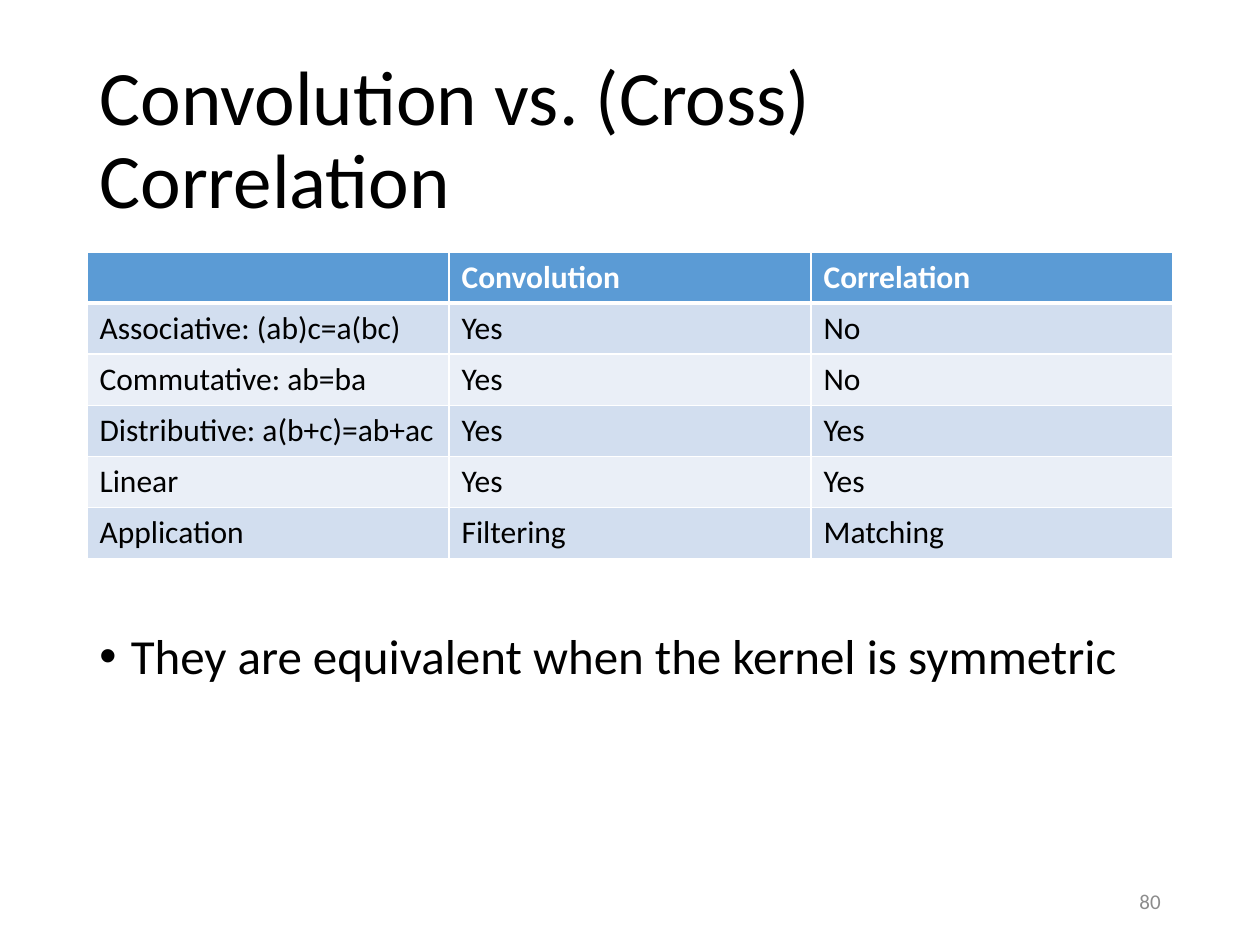
import pptx
import pptx.dml.color
import pptx.enum.text
import pptx.oxml.ns
import pptx.util
import lxml.etree

Inches = pptx.util.Inches
Pt = pptx.util.Pt
ALIGN = pptx.enum.text.PP_ALIGN
ANCHOR = pptx.enum.text.MSO_ANCHOR

PROPERTIES = [
    ["", "Convolution", "Correlation"],
    ["Associative: (ab)c=a(bc)", "Yes", "No"],
    ["Commutative: ab=ba", "Yes", "No"],
    ["Distributive: a(b+c)=ab+ac", "Yes", "Yes"],
    ["Linear", "Yes", "Yes"],
    ["Application", "Filtering", "Matching"],
]


def rgb(value):
    return pptx.dml.color.RGBColor.from_string(value)


def add_xml(parent, tag, **attributes):
    return lxml.etree.SubElement(parent, pptx.oxml.ns.qn(tag), attributes)


def write(frame, text, size=18, color="000000", bold=False, align=ALIGN.LEFT,
          anchor=ANCHOR.TOP, spacing=None, bullet=None):
    frame.word_wrap = True
    frame.vertical_anchor = anchor
    paragraph = frame.paragraphs[0]
    paragraph.text = text
    paragraph.alignment = align
    paragraph.line_spacing = spacing
    if bullet:
        properties = paragraph._p.get_or_add_pPr()
        properties.set("marL", str(Inches(0.25)))
        properties.set("indent", str(Inches(-0.25)))
        add_xml(properties, "a:buFont", typeface="Arial")
        add_xml(properties, "a:buChar", char=bullet)
    font = paragraph.runs[0].font if paragraph.runs else paragraph.font
    font.name = "Calibri"
    font.size = Pt(size)
    font.bold = bold
    font.color.rgb = rgb(color)


def add_border(cell, side, width):
    line = add_xml(cell._tc.get_or_add_tcPr(), f"a:ln{side}", w=str(Pt(width)))
    add_xml(add_xml(line, "a:solidFill"), "a:srgbClr", val="FFFFFF")


def place_title(slide, left, top, width, height):
    title = slide.shapes.title
    title.left, title.top, title.width, title.height = left, top, width, height
    write(title.text_frame, "Convolution vs. (Cross) Correlation", size=44,
          anchor=ANCHOR.MIDDLE, spacing=0.9)


def place_comparison(slide, left, top, width, height):
    table = slide.shapes.add_table(
        len(PROPERTIES), len(PROPERTIES[0]), left, top, width, height).table
    for row, texts in enumerate(PROPERTIES):
        is_header = row == 0
        fill = "5B9BD5" if is_header else ("EAEFF7", "D2DEEF")[row % 2]
        for column, text in enumerate(texts):
            cell = table.cell(row, column)
            write(cell.text_frame, text, bold=is_header,
                  color="FFFFFF" if is_header else "000000")
            for side in "LRTB":
                under_header = (row, side) in ((0, "B"), (1, "T"))
                add_border(cell, side, 3 if under_header else 1)
            cell.fill.solid()
            cell.fill.fore_color.rgb = rgb(fill)


def place_text(slide, left, top, width, height, text, **text_format):
    box = slide.shapes.add_textbox(left, top, width, height)
    write(box.text_frame, text, **text_format)


def main():
    deck = pptx.Presentation()
    deck.slide_width, deck.slide_height = Inches(10), Inches(7.5)
    slide = deck.slides.add_slide(deck.slide_layouts[5])
    left, width = Inches(0.69), Inches(8.62)
    place_title(slide, left, Inches(0.4), width, Inches(1.45))
    place_comparison(slide, left, Inches(2), width, Inches(2.43))
    place_text(slide, left, Inches(4.97), width, Inches(1.79),
               "They are equivalent when the kernel is symmetric",
               size=28, spacing=0.9, bullet="•")
    number_width = Inches(2.25)
    place_text(slide, left + width - number_width, Inches(6.95), number_width,
               Inches(0.4), "80", size=12, color="8C8C8C",
               align=ALIGN.RIGHT, anchor=ANCHOR.MIDDLE)
    deck.save("out.pptx")


if __name__ == "__main__":
    main()
